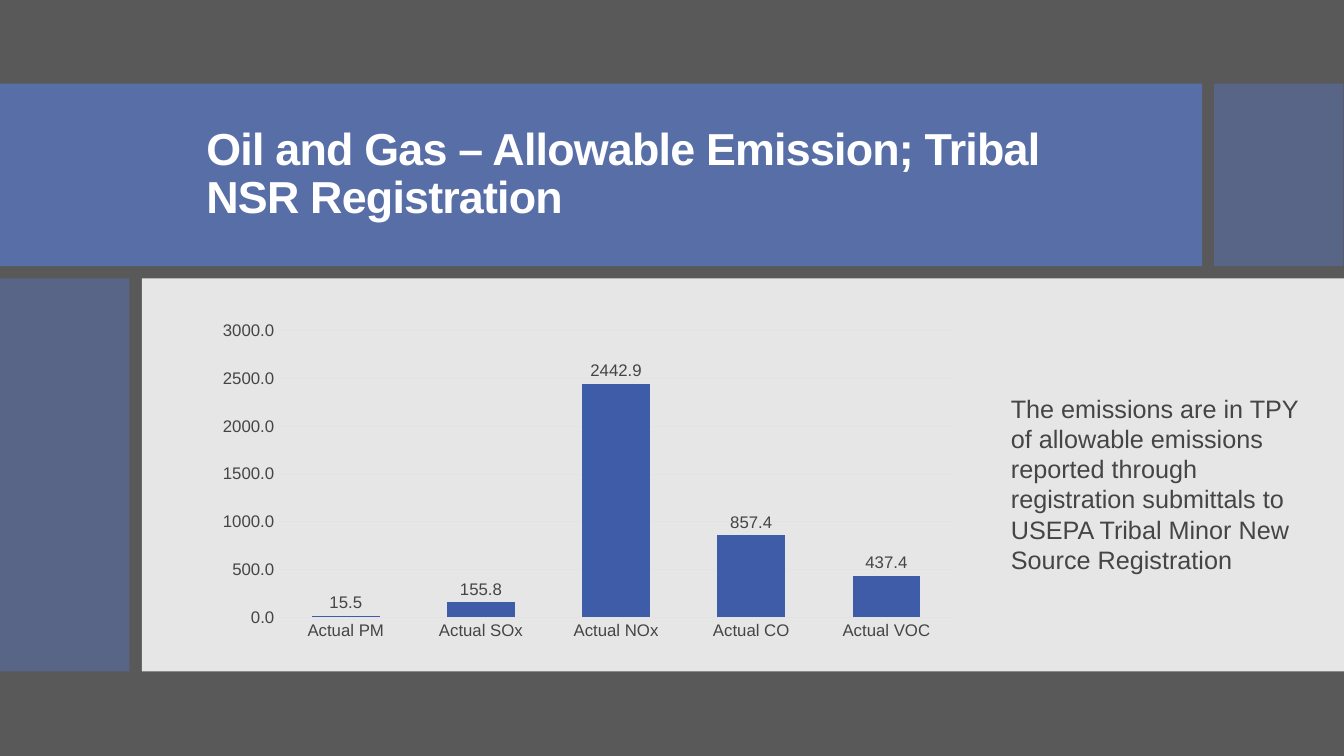
"""Build the slide on allowable oil and gas emissions."""
from lxml import etree
from pptx import Presentation
from pptx.chart.data import CategoryChartData
from pptx.dml.color import RGBColor
from pptx.enum.chart import XL_CHART_TYPE, XL_LABEL_POSITION, XL_TICK_MARK
from pptx.enum.shapes import MSO_SHAPE
from pptx.enum.text import MSO_ANCHOR
from pptx.oxml import parse_xml
from pptx.oxml.ns import nsdecls, qn
from pptx.util import Pt

GREY = RGBColor(0x59, 0x59, 0x59)
BLUE = RGBColor(0x58, 0x6E, 0xA6)
BAR_BLUE = RGBColor(0x3E, 0x5C, 0xA8)
WHITE = RGBColor(0xFF, 0xFF, 0xFF)
INK = RGBColor(0x45, 0x45, 0x45)
PALE = RGBColor(0xE3, 0xE3, 0xE3)
FONT = "Arial"

deck = Presentation()
deck.slide_width, deck.slide_height = Pt(960), Pt(540)
page = deck.slides.add_slide(deck.slide_layouts[6])
page.background.fill.solid()
page.background.fill.fore_color.rgb = GREY


def style(font, size, color=INK, bold=False):
    """Set the face, size and colour of a font."""
    font.name, font.size, font.bold = FONT, Pt(size), bold
    font.color.rgb = color


def add_text(text, left, top, width, height, size, color=INK, bold=False,
             anchor=MSO_ANCHOR.TOP, line_spacing=None, tracking=None):
    """Add a wrapped text box holding one paragraph."""
    box = page.shapes.add_textbox(Pt(left), Pt(top), Pt(width), Pt(height))
    frame = box.text_frame
    frame.word_wrap = True
    frame.vertical_anchor = anchor
    para = frame.paragraphs[0]
    para.line_spacing = line_spacing
    span = para.add_run()
    span.text = text
    style(span.font, size, color, bold)
    if tracking is not None:
        span.font._element.set("spc", str(tracking))


panels = [
    (0, 198.9, 92.4, 280.6, BLUE, 60),
    (0, 59.7, 858.7, 130.5, BLUE, 100),
    (867.2, 59.7, 92.4, 130.5, BLUE, 60),
    (101.3, 198.9, 858.7, 280.6, WHITE, 85),
]
for left, top, width, height, color, opacity in panels:
    panel = page.shapes.add_shape(
        MSO_SHAPE.RECTANGLE, Pt(left), Pt(top), Pt(width), Pt(height))
    panel.shadow.inherit = False
    panel.line.fill.background()
    panel.fill.solid()
    panel.fill.fore_color.rgb = color
    if opacity < 100:
        tint = panel._element.spPr.find(qn("a:solidFill"))[0]
        etree.SubElement(tint, qn("a:alpha")).set("val", str(opacity * 1000))

add_text("Oil and Gas – Allowable Emission; Tribal NSR Registration",
         140.4, 68.4, 676, 113, size=32, color=WHITE, bold=True,
         anchor=MSO_ANCHOR.MIDDLE, line_spacing=0.9, tracking=-60)

emissions = CategoryChartData(number_format="0.0")
emissions.categories = ["Actual PM", "Actual SOx", "Actual NOx", "Actual CO", "Actual VOC"]
emissions.add_series("Series 1", [15.5, 155.8, 2442.9, 857.4, 437.4])
chart = page.shapes.add_chart(
    XL_CHART_TYPE.COLUMN_CLUSTERED, Pt(140.4), Pt(156.2), Pt(634.3), Pt(319),
    emissions).chart
chart.has_title = False
chart.has_legend = False
style(chart.font, 12)

for axis in (chart.category_axis, chart.value_axis):
    axis.major_tick_mark = axis.minor_tick_mark = XL_TICK_MARK.NONE
    style(axis.tick_labels.font, 12)
chart.category_axis.format.line.color.rgb = PALE
chart.category_axis.format.line.width = Pt(0.75)
values = chart.value_axis
values.minimum_scale, values.maximum_scale, values.major_unit = 0, 3000, 500
values.tick_labels.number_format = "0.0"
values.tick_labels.number_format_is_linked = False
values.format.line.fill.background()
values.major_gridlines.format.line.color.rgb = PALE
values.major_gridlines.format.line.width = Pt(0.75)

plot = chart.plots[0]
plot.vary_by_categories = False
plot.gap_width, plot.overlap = 100, -24
bars = plot.series[0]
bars.format.fill.solid()
bars.format.fill.fore_color.rgb = BAR_BLUE
labels = bars.data_labels
labels.show_value = True
labels.position = XL_LABEL_POSITION.OUTSIDE_END
labels.number_format = "0.0"
labels.number_format_is_linked = False
style(labels.font, 12)

plot_area = chart._chartSpace.chart.plotArea
for old_layout in plot_area.findall(qn("c:layout")):
    plot_area.remove(old_layout)
layout = parse_xml(f"<c:layout {nsdecls('c')}><c:manualLayout/></c:layout>")
for tag, setting in [("layoutTarget", "inner"), ("xMode", "edge"), ("yMode", "edge"),
                     ("x", 0.092), ("y", 0.251), ("w", 0.761), ("h", 0.642)]:
    etree.SubElement(layout[0], qn(f"c:{tag}")).set("val", str(setting))
plot_area.insert(0, layout)

add_text("The emissions are in TPY of allowable emissions reported through "
         "registration submittals to USEPA Tribal Minor New Source Registration",
         715, 277.2, 221, 138.2, size=18)

deck.save("out.pptx")
